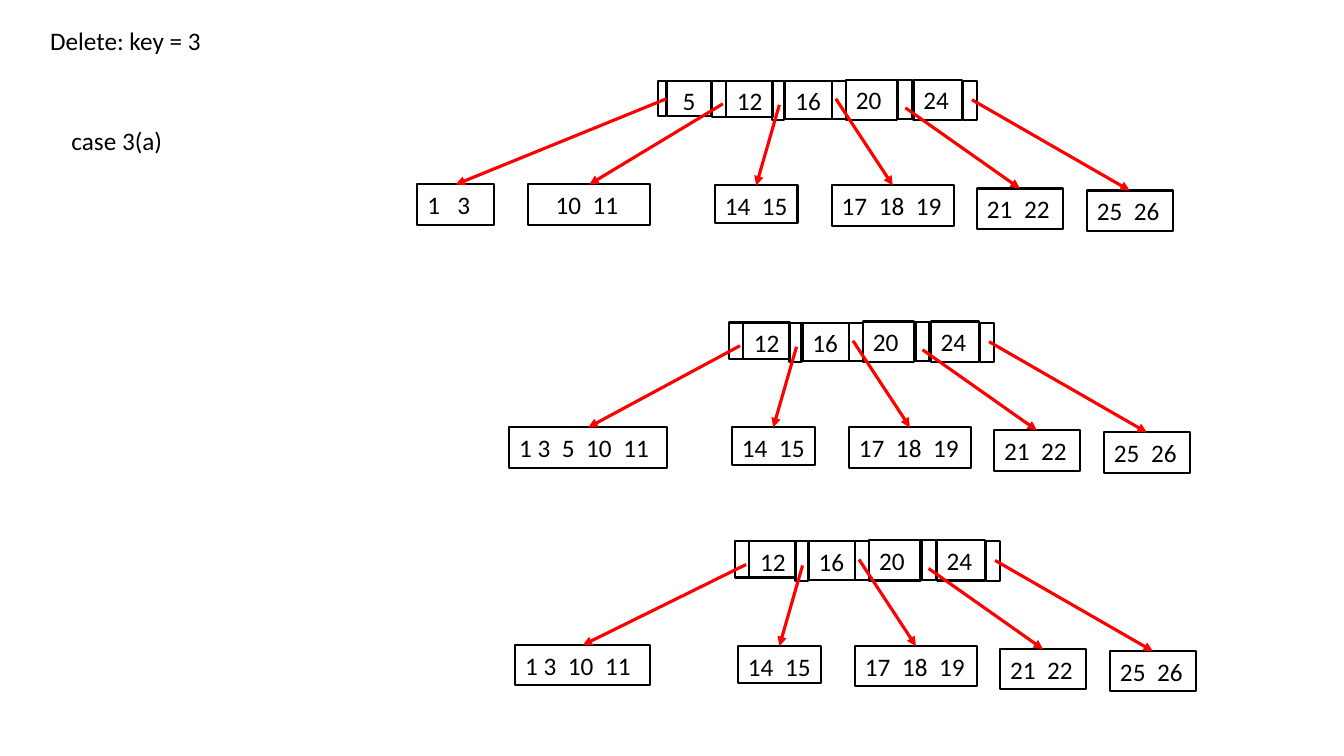
from lxml.etree import SubElement
from pptx import Presentation
from pptx.dml.color import RGBColor
from pptx.enum.shapes import MSO_CONNECTOR, MSO_SHAPE
from pptx.enum.text import MSO_ANCHOR, PP_ALIGN
from pptx.oxml.ns import qn
from pptx.util import Inches, Pt

COLORS = {"ink": "000000", "arrow": "FF0000"}
FONT, SIZE = "Calibri", 18
DIGIT, SPACE = 0.127, 0.057  # character widths at this size
PAD = 0.1

# Labels: text, left, top, width, height
LABELS = [
    ("Delete: key = 3", 0.4, 0.2, 2.54, 0.4),
    ("case 3(a)", 0.61, 1.19, 2.18, 0.4),
]

# Root keys: text, left, top, width, height, centred
KEYS = [
    ("12", 7.2, 0.8, 0.47, 0.36, True),
    ("16", 7.79, 0.8, 0.46, 0.38, False),
    ("20", 8.39, 0.79, 0.51, 0.4, False),
    ("24", 9.06, 0.79, 0.48, 0.4, False),
]
FIRST_KEY = ("5", 6.62, 0.8, 0.43, 0.35, True)

# Pointer slots: left, top, width, height
SLOTS = [
    (7.06, 0.8, 0.14, 0.36),
    (7.66, 0.8, 0.12, 0.39),
    (8.25, 0.8, 0.14, 0.38),
    (8.91, 0.79, 0.14, 0.39),
    (9.55, 0.8, 0.14, 0.39),
]
FIRST_SLOT = (6.53, 0.8, 0.08, 0.35)

# Leaves: text, left, top, width, height, spaces per tab, indent, arrow start
LEAVES = [
    ("14\t15", 7.09, 1.84, 0.82, 0.37, 2, 0, (7.73, 1.04)),
    ("17\t18\t19", 8.25, 1.84, 1.21, 0.4, 2, 0, (8.29, 0.98)),
    ("21\t22", 9.69, 1.87, 0.85, 0.4, 2, 0, (8.98, 1.07)),
    ("25\t26", 10.78, 1.89, 0.85, 0.4, 2, 0, (9.64, 0.99)),
]
SECOND = (7.17, 1.03)

# Trees: shift right, shift down, extra keys, extra slots, left leaves
TREES = [
    (0, 0, [FIRST_KEY], [FIRST_SLOT], [
        ("1\t3", 4.14, 1.83, 0.76, 0.4, 3, 0, (6.61, 0.98)),
        ("10\t11", 5.24, 1.83, 1.21, 0.4, 2, 0.17, SECOND)]),
    (0.17, 2.4, [], [], [
        ("1 3\t5\t10\t11", 4.88, 1.84, 1.57, 0.4, 2, 0, SECOND)]),
    (0.23, 4.57, [], [], [
        ("1 3\t10\t11", 4.88, 1.83, 1.34, 0.4, 2, 0, SECOND)]),
]

deck = Presentation()
deck.slide_width, deck.slide_height = Inches(13.33), Inches(7.5)
slide = deck.slides.add_slide(deck.slide_layouts[6])
shapes = slide.shapes


def color(name):
    return RGBColor.from_string(COLORS[name])


def write(shape, text, gap=2, indent=0, center=False):
    frame = shape.text_frame
    frame.word_wrap = True
    frame.vertical_anchor = MSO_ANCHOR.TOP
    frame.margin_left = Inches(PAD + indent)
    frame.margin_right = Inches(PAD if center else 0)
    frame.text = text
    para = frame.paragraphs[0]
    para.alignment = PP_ALIGN.CENTER if center else PP_ALIGN.LEFT
    # Each tab stop follows the width of the keys before it
    parts = text.split("\t")
    if len(parts) > 1:
        stops = SubElement(para._p.get_or_add_pPr(), qn("a:tabLst"))
        stop = 0
        for part in parts[:-1]:
            stop += sum(SPACE if c == " " else DIGIT for c in part) + gap * SPACE
            SubElement(stops, qn("a:tab"), pos=str(Inches(stop)), algn="l")
    para.font.name, para.font.size = FONT, Pt(SIZE)
    para.font.color.rgb = color("ink")


def add_box(left, top, width, height):
    box = shapes.add_shape(MSO_SHAPE.RECTANGLE, *map(Inches, (left, top, width, height)))
    box.shadow.inherit = False
    box.fill.background()
    box.line.color.rgb = color("ink")
    box.line.width = Pt(1.5)
    return box


def add_arrow(x, y, leaf):
    start = Inches(x), Inches(y)
    arrow = shapes.add_connector(MSO_CONNECTOR.STRAIGHT, *start, *start)
    arrow.end_connect(leaf, 0)
    arrow.line.color.rgb = color("arrow")
    arrow.line.width = Pt(2.25)
    SubElement(arrow.line._get_or_add_ln(), qn("a:tailEnd"), type="triangle")
    SubElement(arrow._element.spPr, qn("a:effectLst"))


# Labels
for text, *place in LABELS:
    write(shapes.add_textbox(*map(Inches, place)), text)

# Trees
for dx, dy, keys, slots, leaves in TREES:
    for left, top, width, height in slots + SLOTS:
        add_box(left + dx, top + dy, width, height)
    for text, left, top, width, height, center in keys + KEYS:
        write(add_box(left + dx, top + dy, width, height), text, center=center)
    for text, left, top, width, height, gap, indent, (x, y) in leaves + LEAVES:
        leaf = add_box(left + dx, top + dy, width, height)
        write(leaf, text, gap, indent)
        add_arrow(x + dx, y + dy, leaf)

deck.save("out.pptx")
